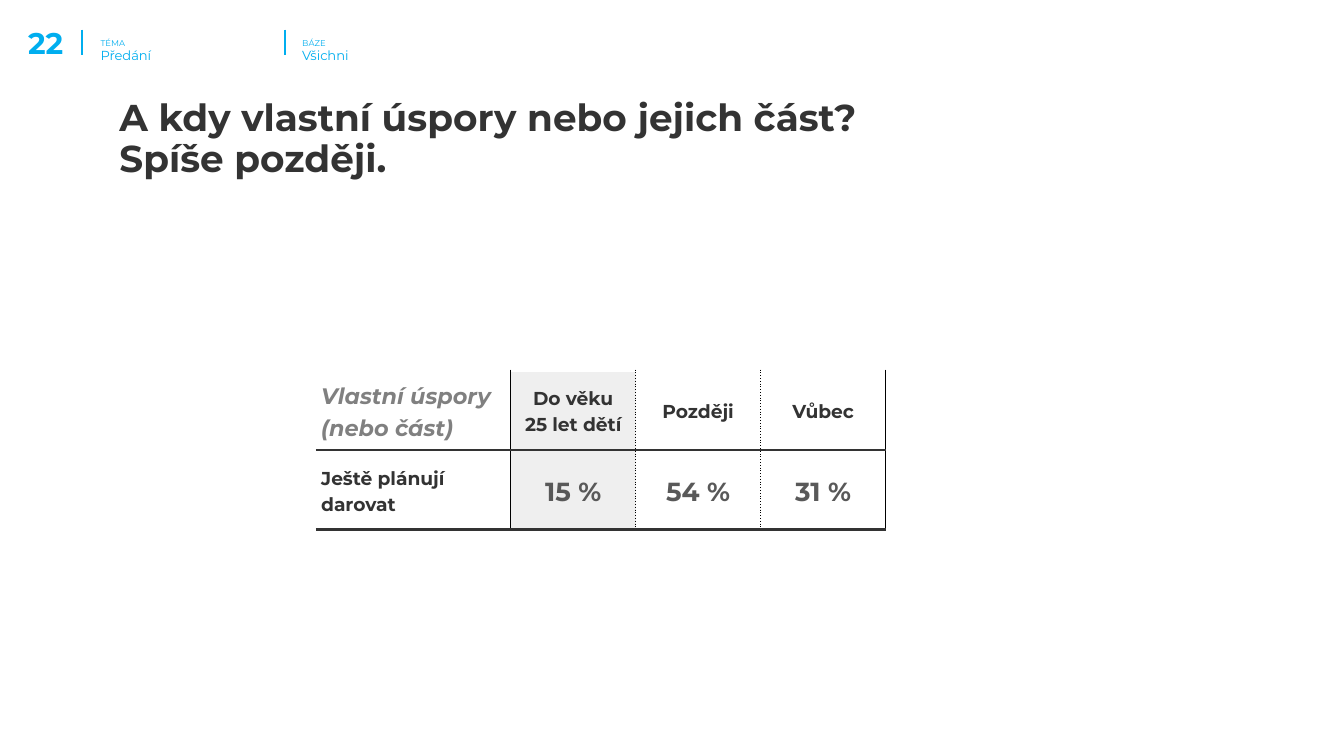
from lxml import etree
from pptx import Presentation
from pptx import util as u
from pptx.dml.color import RGBColor
from pptx.enum import shapes, text
from pptx.oxml import parse_xml
from pptx.oxml.ns import nsdecls, qn

BLUE, DARK, GREY, MID = "00AEEF", "333333", "808080", "595959"
BLACK, WHITE, SHADE = "000000", "FFFFFF", "EFEFEF"
LEFT, CENTER, RIGHT = text.PP_ALIGN.LEFT, text.PP_ALIGN.CENTER, text.PP_ALIGN.RIGHT


def color(value):
    return RGBColor.from_string(value)


def write(frame, words, size, hue, bold=False, italic=False, align=LEFT, spacing=1.0):
    """Fill the first paragraph of a frame, one run per line of words."""
    para = frame.paragraphs[0]
    para.alignment = align
    para.line_spacing = spacing
    for index, line in enumerate(words.split("\n")):
        if index:
            para.add_line_break()
        span = para.add_run()
        span.text = line
        span.font.name = "Montserrat"
        span.font.size = u.Pt(size)
        span.font.bold = bold
        span.font.italic = italic
        span.font.color.rgb = color(hue)


deck = Presentation()
deck.slide_width, deck.slide_height = u.Inches(10), u.Inches(10 * 9 / 16)
page = deck.slides.add_slide(deck.slide_layouts[6])

# Header dividers
for x, width in [(0.61, 0.75), (2.12, 0.7)]:
    divider = page.shapes.add_connector(
        shapes.MSO_CONNECTOR.STRAIGHT, u.Inches(x), u.Inches(0.22), u.Inches(x), u.Inches(0.41))
    divider.line.color.rgb = color(BLUE)
    divider.line.width = u.Pt(width)
    etree.SubElement(divider._element.spPr, qn("a:effectLst"))

# Page number, header labels and title; the fifth number is the top margin
labels = [
    (0, 0, 0.47, 0.45, 0.1, "22", 16, BLUE, True, RIGHT, 1.0),
    (0.65, 0.12, 0.63, 0.42, 0.16, "TÉMA", 4.5, BLUE, False, LEFT, 1.0),
    (2.15, 0.12, 0.63, 0.42, 0.16, "BÁZE", 4.5, BLUE, False, LEFT, 1.0),
    (0.65, 0.21, 0.75, 0.29, 0.14, "Předání", 7, BLUE, False, LEFT, 1.0),
    (2.15, 0.21, 0.6, 0.29, 0.14, "Všichni", 7, BLUE, False, LEFT, 1.0),
    (0.79, 0.64, 6.58, 0.5, 0.1, "A kdy vlastní úspory nebo jejich část?\nSpíše později.",
     20, DARK, True, LEFT, 0.9),
]
for x, y, width, height, top, words, size, hue, bold, align, spacing in labels:
    box = page.shapes.add_textbox(u.Inches(x), u.Inches(y), u.Inches(width), u.Inches(height))
    frame = box.text_frame
    frame.word_wrap = True
    frame.margin_left, frame.margin_top = u.Inches(0.1), u.Inches(top)
    is_number = align == RIGHT
    frame.margin_right = u.Inches(0 if is_number else 0.1)
    frame.margin_bottom = u.Inches(0 if is_number else 0.05)
    frame.vertical_anchor = text.MSO_ANCHOR.BOTTOM if is_number else text.MSO_ANCHOR.TOP
    write(frame, words, size, hue, bold, align=align, spacing=spacing)

# Table of savings
rows = [
    ["Vlastní úspory (nebo část)", "Do věku\n25 let dětí", "Později", "Vůbec"],
    ["Ještě plánují darovat", "15 %", "54 %", "31 %"],
]
column_widths = [1.44, 0.93, 0.93, 0.93]
row_height = 0.59
holder = page.shapes.add_table(
    len(rows), len(column_widths), u.Inches(2.36), u.Inches(2.76),
    u.Inches(sum(column_widths)), u.Inches(row_height * len(rows)))
table = holder.table
table.first_row = table.horz_banding = False
for column, width in zip(table.columns, column_widths):
    column.width = u.Inches(width)

# Vertical rules from left to right, horizontal rules from top to bottom
solid, dotted = (BLACK, 0.75, "solid"), (BLACK, 0.75, "sysDot")
clear, heavy = (WHITE, 1.5, "solid"), (DARK, 1.5, "solid")
verticals = [clear, solid, dotted, dotted, solid]
horizontals = [clear, heavy, heavy]

for r, row in enumerate(rows):
    table.rows[r].height = u.Inches(row_height)
    for c, words in enumerate(row):
        cell = table.cell(r, c)
        cell.margin_left = cell.margin_right = u.Inches(0.03)
        cell.margin_top = cell.margin_bottom = u.Inches(0.02)
        cell.vertical_anchor = text.MSO_ANCHOR.MIDDLE
        is_corner = r == c == 0
        is_value = r > 0 and c > 0
        size, hue = (12, GREY) if is_corner else (14, MID) if is_value else (10, DARK)
        write(cell.text_frame, words, size, hue, True, is_corner, CENTER if c else LEFT, 1.15)

        edges = {"L": verticals[c], "R": verticals[c + 1],
                 "T": horizontals[r], "B": horizontals[r + 1]}
        properties = cell._tc.get_or_add_tcPr()
        for side, (shade, width, dash) in edges.items():
            properties.append(parse_xml(
                f'<a:ln{side} {nsdecls("a")} w="{u.Pt(width)}"><a:solidFill>'
                f'<a:srgbClr val="{shade}"/></a:solidFill><a:prstDash val="{dash}"/></a:ln{side}>'))
        if c:
            cell.fill.solid()
            cell.fill.fore_color.rgb = color(SHADE if c == 1 else WHITE)
        else:
            cell.fill.background()

deck.save("out.pptx")
